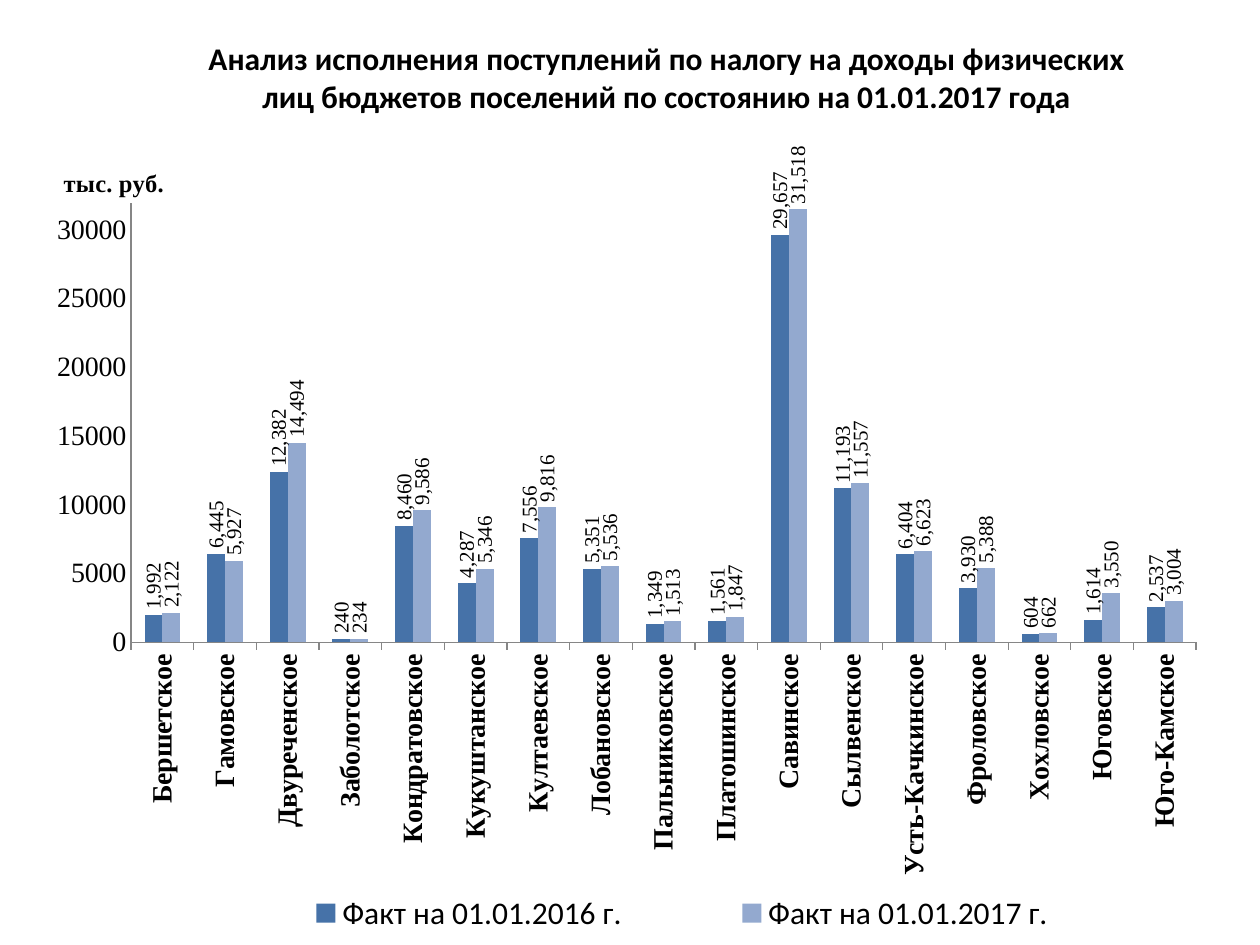
from dataclasses import dataclass

from lxml.etree import SubElement
from pptx import Presentation
from pptx.chart.data import CategoryChartData
from pptx.dml.color import RGBColor
from pptx.enum.chart import XL_CHART_TYPE, XL_LABEL_POSITION, XL_LEGEND_POSITION, XL_TICK_LABEL_POSITION, XL_TICK_MARK
from pptx.enum.text import MSO_ANCHOR, MSO_AUTO_SIZE, PP_ALIGN
from pptx.oxml import parse_xml
from pptx.oxml.ns import nsdecls, qn
from pptx.util import Pt


@dataclass(frozen=True)
class Theme:
    text: str = "000000"
    axis: str = "868686"
    previous_year: str = "4672A8"
    current_year: str = "93A9CF"
    heading_font: str = "Calibri"
    chart_font: str = "Times New Roman"
    title_size: int = 18
    legend_size: int = 18
    axis_size: int = 16
    unit_size: int = 14
    label_size: int = 12


theme = Theme()


def style_font(font, name, size, bold=False):
    font.name = name
    font.size = Pt(size)
    font.bold = bold
    font.color.rgb = RGBColor.from_string(theme.text)


def write_text(text_frame, text, align=PP_ALIGN.CENTER, **font_format):
    paragraph = text_frame.paragraphs[0]
    paragraph.alignment = align
    run = paragraph.add_run()
    run.text = text
    style_font(run.font, **font_format)


presentation = Presentation()
presentation.slide_width = Pt(720)
presentation.slide_height = Pt(540)
slide = presentation.slides.add_slide(presentation.slide_layouts[5])

settlements = [
    ("Бершетское", 1992, 2122),
    ("Гамовское", 6445, 5927),
    ("Двуреченское", 12382, 14494),
    ("Заболотское", 240, 234),
    ("Кондратовское", 8460, 9586),
    ("Кукуштанское", 4287, 5346),
    ("Култаевское", 7556, 9816),
    ("Лобановское", 5351, 5536),
    ("Пальниковское", 1349, 1513),
    ("Платошинское", 1561, 1847),
    ("Савинское", 29657, 31518),
    ("Сылвенское", 11193, 11557),
    ("Усть-Качкинское", 6404, 6623),
    ("Фроловское", 3930, 5388),
    ("Хохловское", 604, 662),
    ("Юговское", 1614, 3550),
    ("Юго-Камское", 2537, 3004),
]
names, previous_values, current_values = zip(*settlements)
chart_data = CategoryChartData(number_format="#,##0")
chart_data.categories = names
chart_data.add_series("Факт на 01.01.2016 г.", previous_values)
chart_data.add_series("Факт на 01.01.2017 г.", current_values)

chart = slide.shapes.add_chart(
    XL_CHART_TYPE.COLUMN_CLUSTERED, Pt(25.2), Pt(2.2), Pt(663), Pt(535.7), chart_data
).chart
chart.has_title = False
style_font(chart.font, theme.heading_font, 10)
plot = chart.plots[0]
plot.gap_width = 150
plot.overlap = 0
plot.vary_by_categories = False

for series, color in zip(plot.series, (theme.previous_year, theme.current_year)):
    series.format.fill.solid()
    series.format.fill.fore_color.rgb = RGBColor.from_string(color)
    labels = series.data_labels
    labels.show_value = True
    labels.number_format = "#,##0"
    labels.number_format_is_linked = False
    labels.position = XL_LABEL_POSITION.OUTSIDE_END
    style_font(labels.font, theme.chart_font, theme.label_size)
    label_body = labels._element.find(qn("c:txPr")).find(qn("a:bodyPr"))
    label_body.set("rot", "-5400000")
    label_body.set("vert", "horz")

category_axis = chart.category_axis
value_axis = chart.value_axis
for axis, bold in ((category_axis, True), (value_axis, False)):
    axis.has_major_gridlines = False
    axis.minor_tick_mark = XL_TICK_MARK.NONE
    axis.format.line.color.rgb = RGBColor.from_string(theme.axis)
    style_font(axis.tick_labels.font, theme.chart_font, theme.axis_size, bold)

category_axis.major_tick_mark = XL_TICK_MARK.OUTSIDE
category_axis.tick_label_position = XL_TICK_LABEL_POSITION.LOW
category_body = category_axis._element.find(qn("c:txPr")).find(qn("a:bodyPr"))
category_body.set("rot", "-5400000")
category_body.set("vert", "horz")

value_axis.major_tick_mark = XL_TICK_MARK.NONE
value_axis.minimum_scale = 0
value_axis.maximum_scale = 32000
value_axis.major_unit = 5000
value_axis.tick_labels.number_format = "0"
value_axis.tick_labels.number_format_is_linked = False
unit_frame = value_axis.axis_title.text_frame
write_text(unit_frame, "тыс. руб.", name=theme.chart_font, size=theme.unit_size, bold=True)
unit_body = unit_frame._txBody.find(qn("a:bodyPr"))
unit_body.set("rot", "0")
unit_body.set("vert", "horz")

chart.has_legend = True
legend = chart.legend
legend.position = XL_LEGEND_POSITION.BOTTOM
legend.include_in_layout = False
style_font(legend.font, theme.heading_font, theme.legend_size)

layouts = (
    (chart._chartSpace.chart.plotArea, 0,
     {"layoutTarget": "inner", "xMode": "edge", "yMode": "edge", "x": 0.075, "y": 0.212, "w": 0.918, "h": 0.469}),
    (value_axis.axis_title._element, 1, {"xMode": "edge", "yMode": "edge", "x": 0.013, "y": 0.17}),
    (legend._element, 1, {"xMode": "edge", "yMode": "edge", "x": 0.14, "y": 0.94, "w": 0.82, "h": 0.06}),
)
for parent, index, settings in layouts:
    for old_layout in parent.findall(qn("c:layout")):
        parent.remove(old_layout)
    layout = parse_xml(f"<c:layout {nsdecls('c')}><c:manualLayout/></c:layout>")
    for tag, value in settings.items():
        SubElement(layout[0], qn(f"c:{tag}")).set("val", str(value))
    parent.insert(index, layout)

title = slide.shapes.title
title.left, title.top, title.width, title.height = Pt(111), Pt(20), Pt(540), Pt(48)
title_frame = title.text_frame
title_frame.word_wrap = True
title_frame.auto_size = MSO_AUTO_SIZE.NONE
title_frame.vertical_anchor = MSO_ANCHOR.MIDDLE
title_frame.margin_left = title_frame.margin_right = title_frame.margin_top = title_frame.margin_bottom = 0
write_text(
    title_frame,
    "Анализ исполнения поступлений по налогу на доходы физических "
    "лиц бюджетов поселений по состоянию на 01.01.2017 года",
    name=theme.heading_font, size=theme.title_size, bold=True,
)
slide.shapes._spTree.append(title._element)

presentation.save("out.pptx")
